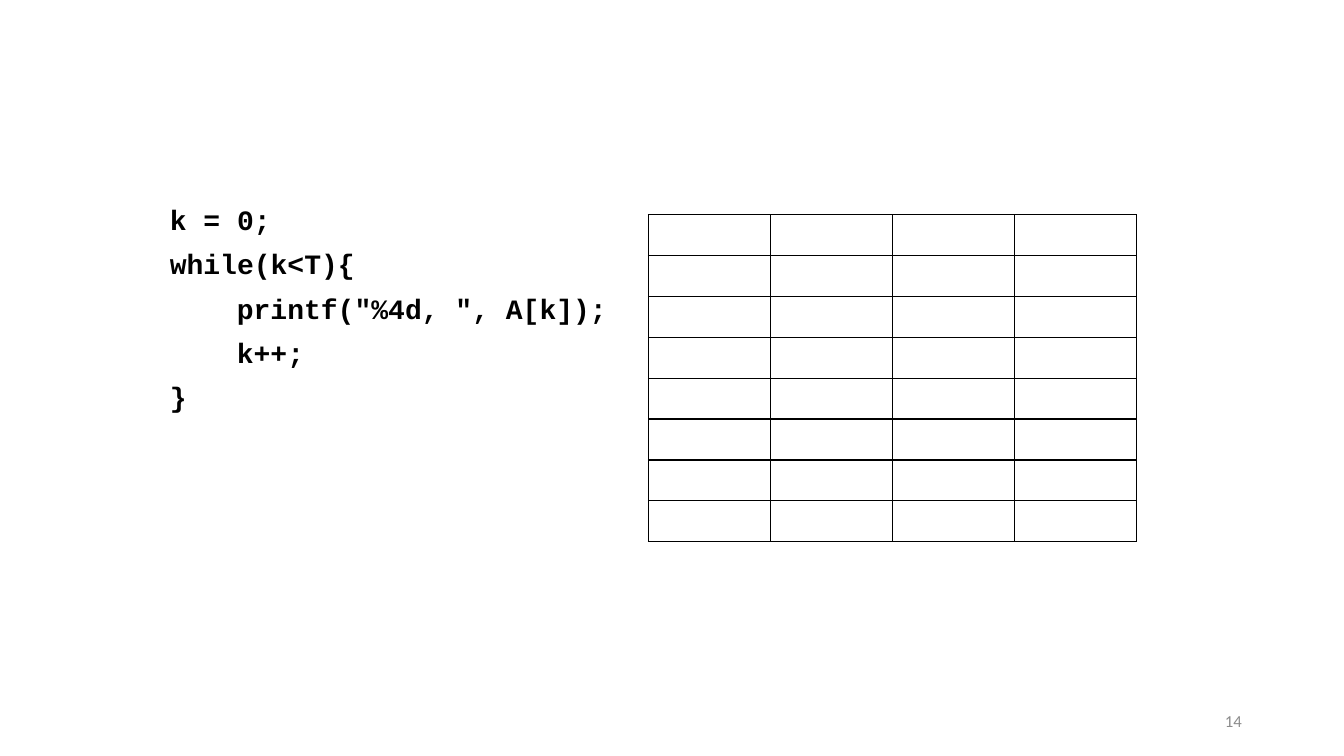
from dataclasses import dataclass

from lxml import etree
from pptx import Presentation
from pptx.dml.color import RGBColor
from pptx.enum.text import MSO_ANCHOR, PP_ALIGN
from pptx.oxml.ns import qn
from pptx.slide import Slide
from pptx.table import _Cell
from pptx.util import Cm, Pt

LEFT, RIGHT = PP_ALIGN.LEFT, PP_ALIGN.RIGHT
TOP, MIDDLE = MSO_ANCHOR.TOP, MSO_ANCHOR.MIDDLE


@dataclass(frozen=True)
class Theme:
    ink: str = "000000"
    muted: str = "8C8C8C"
    code_font: str = "Courier New"
    number_font: str = "Calibri"
    code_size: float = 20
    number_size: float = 12
    border_width: float = 1


@dataclass(frozen=True)
class Frame:
    left: float
    top: float
    width: float
    height: float

    def lengths(self) -> tuple[Cm, Cm, Cm, Cm]:
        return Cm(self.left), Cm(self.top), Cm(self.width), Cm(self.height)


@dataclass(frozen=True)
class Line:
    text: str
    depth: int = 0


THEME = Theme()
CODE_FRAME = Frame(2.34, 5.08, 13.54, 12.09)
GRID_FRAME = Frame(16.34, 5.41, 12.3, 8.24)
NUMBER_FRAME = Frame(23.93, 17.65, 7.62, 1.02)
GRID_ROWS, GRID_COLUMNS = 8, 4
INDENT_STEP = 1.69
CODE = [
    Line("k = 0;", 1),
    Line("while(k<T){", 1),
    Line('printf("%4d, ", A[k]);', 2),
    Line("k++;", 2),
    Line("}", 1),
]


def add_text(page: Slide, frame: Frame, lines: list[Line], *, font: str,
             size: float, color: str, bold: bool = False,
             align: PP_ALIGN = LEFT, anchor: MSO_ANCHOR = TOP,
             line_spacing: float = 1.0, space_before: float = 0) -> None:
    box = page.shapes.add_textbox(*frame.lengths())
    text_frame = box.text_frame
    text_frame.word_wrap = True
    text_frame.vertical_anchor = anchor
    for index, line in enumerate(lines):
        para = text_frame.add_paragraph() if index else text_frame.paragraphs[0]
        para.alignment = align
        para.line_spacing = line_spacing
        para.space_before = Pt(space_before)
        para._p.get_or_add_pPr().set("marL", str(Cm(INDENT_STEP * line.depth)))
        span = para.add_run()
        span.text = line.text
        span.font.name = font
        span.font.size = Pt(size)
        span.font.bold = bold
        span.font.color.rgb = RGBColor.from_string(color)


def outline_cell(cell: _Cell, color: str, width: float) -> None:
    properties = cell._tc.get_or_add_tcPr()
    for side in ("a:lnL", "a:lnR", "a:lnT", "a:lnB"):
        border = etree.SubElement(properties, qn(side), w=str(Pt(width)))
        fill = etree.SubElement(border, qn("a:solidFill"))
        etree.SubElement(fill, qn("a:srgbClr"), val=color)


def add_grid(page: Slide, frame: Frame, rows: int, columns: int) -> None:
    table = page.shapes.add_table(rows, columns, *frame.lengths()).table
    table.first_row = False
    table.horz_banding = False
    for cell in table.iter_cells():
        cell.margin_top = cell.margin_bottom = Cm(0)
        outline_cell(cell, THEME.ink, THEME.border_width)
        cell.fill.background()


def main() -> None:
    """Build the slide with a while loop beside an empty trace grid."""
    deck = Presentation()
    deck.slide_width, deck.slide_height = Cm(33.87), Cm(19.05)
    page = deck.slides.add_slide(deck.slide_layouts[6])
    add_text(page, CODE_FRAME, CODE, font=THEME.code_font,
             size=THEME.code_size, color=THEME.ink, bold=True,
             line_spacing=0.9, space_before=10)
    add_grid(page, GRID_FRAME, GRID_ROWS, GRID_COLUMNS)
    add_text(page, NUMBER_FRAME, [Line("14")], font=THEME.number_font,
             size=THEME.number_size, color=THEME.muted,
             align=RIGHT, anchor=MIDDLE)
    deck.save("out.pptx")


if __name__ == "__main__":
    main()
